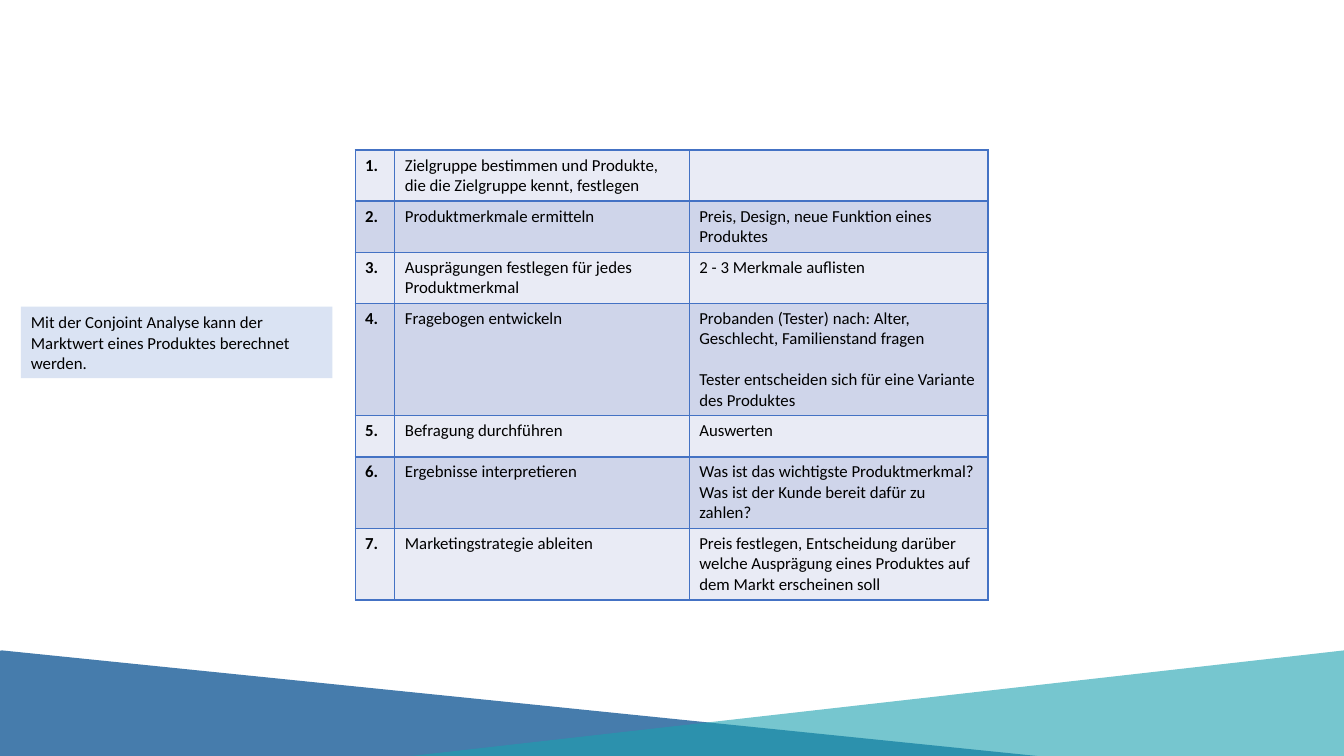
from dataclasses import dataclass

from lxml.etree import SubElement
from pptx import Presentation
from pptx.dml.color import RGBColor
from pptx.enum.shapes import MSO_SHAPE
from pptx.enum.text import MSO_AUTO_SIZE, PP_ALIGN
from pptx.oxml.ns import qn
from pptx.util import Cm, Pt


@dataclass(frozen=True)
class Theme:
    """Colours, font and sizes of the slide."""
    font: str = "Calibri"
    text_size: float = 12
    border_width: float = 1
    text: str = "000000"
    blue: str = "095191"
    teal: str = "1BA0AF"
    note: str = "DAE3F3"
    border: str = "4472C4"
    bands: tuple = ("E9EBF5", "CFD5EA")


STEPS = [
    ("Zielgruppe bestimmen und Produkte, die die Zielgruppe kennt, festlegen", []),
    ("Produktmerkmale ermitteln", ["Preis, Design, neue Funktion eines Produktes"]),
    ("Ausprägungen festlegen für jedes Produktmerkmal", ["2 - 3 Merkmale auflisten"]),
    ("Fragebogen entwickeln",
     ["Probanden (Tester) nach: Alter, Geschlecht, Familienstand fragen",
      "Tester entscheiden sich für eine Variante des Produktes"]),
    ("Befragung durchführen", ["Auswerten"]),
    ("Ergebnisse interpretieren",
     ["Was ist das wichtigste Produktmerkmal?",
      "Was ist der Kunde bereit dafür zu zahlen?"]),
    ("Marketingstrategie ableiten",
     ["Preis festlegen, Entscheidung darüber welche Ausprägung eines Produktes "
      "auf dem Markt erscheinen soll"]),
]
SPACED_STEP = "Fragebogen entwickeln"


def write_text(frame, paragraphs, *, theme, bold=False, gap=0):
    """Fill a text frame with left-aligned paragraphs, gap points apart."""
    frame.word_wrap = True
    for index, text in enumerate(paragraphs):
        paragraph = frame.add_paragraph() if index else frame.paragraphs[0]
        paragraph.alignment = PP_ALIGN.LEFT
        paragraph.space_before = Pt(gap if index else 0)
        run = paragraph.add_run()
        run.text = text
        run.font.name = theme.font
        run.font.size = Pt(theme.text_size)
        run.font.bold = bold
        run.font.color.rgb = RGBColor.from_string(theme.text)


class SlideBuilder:
    """Draws styled elements on the current slide."""

    def __init__(self, slide, theme):
        self.slide = slide
        self.theme = theme

    def shape(self, kind, left, top, width, height, color):
        """Add a borderless filled shape."""
        shape = self.slide.shapes.add_shape(
            kind, Cm(left), Cm(top), Cm(width), Cm(height))
        shape.shadow.inherit = False
        shape.fill.solid()
        shape.fill.fore_color.rgb = RGBColor.from_string(color)
        shape.line.fill.background()
        return shape

    def triangle(self, left, top, width, height, color, opacity, apex):
        """Add a translucent triangle with its apex at a share of the width."""
        shape = self.shape(MSO_SHAPE.ISOSCELES_TRIANGLE, left, top, width, height, color)
        shape.adjustments[0] = apex
        color_element = shape.element.spPr.find(qn("a:solidFill")).find(qn("a:srgbClr"))
        SubElement(color_element, qn("a:alpha"), val=str(opacity * 1000))

    def note(self, left, top, width, height, text):
        """Add a filled box that grows with its text."""
        shape = self.shape(MSO_SHAPE.RECTANGLE, left, top, width, height, self.theme.note)
        write_text(shape.text_frame, [text], theme=self.theme)
        shape.text_frame.auto_size = MSO_AUTO_SIZE.SHAPE_TO_FIT_TEXT

    def style_cell(self, cell, color):
        """Give a cell its four borders and its fill."""
        properties = cell._tc.get_or_add_tcPr()
        for side in "LRTB":
            line = SubElement(properties, qn(f"a:ln{side}"),
                              w=str(Pt(self.theme.border_width)))
            fill = SubElement(line, qn("a:solidFill"))
            SubElement(fill, qn("a:srgbClr"), val=self.theme.border)
        cell.fill.solid()
        cell.fill.fore_color.rgb = RGBColor.from_string(color)

    def step_table(self, left, top, widths, row_height, steps):
        """Add a banded table of numbered steps."""
        table = self.slide.shapes.add_table(
            len(steps), len(widths), Cm(left), Cm(top),
            Cm(sum(widths)), Cm(row_height * len(steps))).table
        table.first_row = table.horz_banding = False
        for column, width in zip(table.columns, widths):
            column.width = Cm(width)
        for index, (step, details) in enumerate(steps):
            table.rows[index].height = Cm(row_height)
            gap = 14.6 if step == SPACED_STEP else 0
            for column, content in enumerate(([f"{index + 1}."], [step], details)):
                cell = table.cell(index, column)
                self.style_cell(cell, self.theme.bands[index % 2])
                write_text(cell.text_frame, content, theme=self.theme,
                           bold=column == 0, gap=gap)


def main():
    """Build and save the slide."""
    presentation = Presentation()
    presentation.slide_width, presentation.slide_height = Cm(33.87), Cm(19.05)
    theme = Theme()
    slide = presentation.slides.add_slide(presentation.slide_layouts[6])
    builder = SlideBuilder(slide, theme)
    builder.triangle(-19.5, 16.39, 50.14, 3.12, theme.blue, 75, 0.39)
    builder.triangle(4.98, 16.39, 57.78, 3.27, theme.teal, 60, 0.5)
    builder.step_table(8.95, 3.78, (1, 7.42, 7.53), 1.04, STEPS)
    builder.note(0.53, 7.73, 7.85, 1.8,
                 "Mit der Conjoint Analyse kann der Marktwert eines Produktes "
                 "berechnet werden.")
    presentation.save("out.pptx")


if __name__ == "__main__":
    main()
